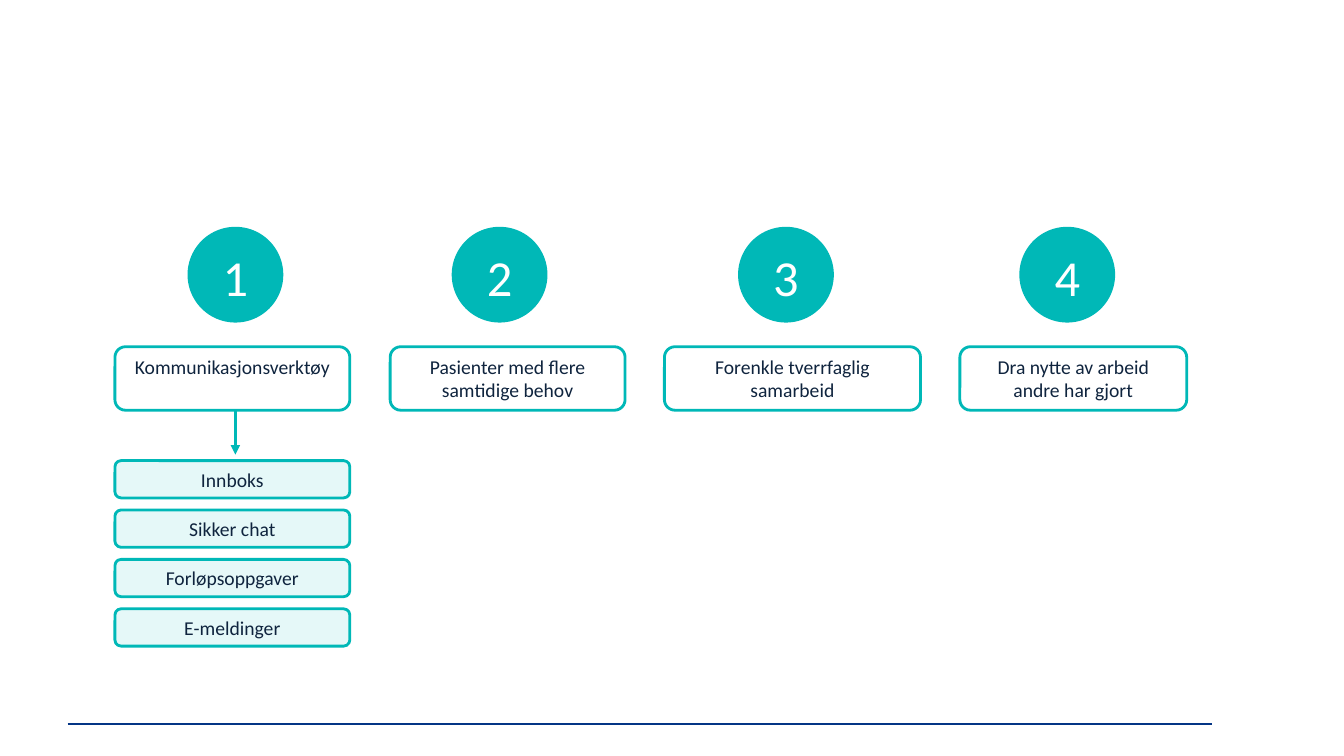
from lxml import etree
from pptx import Presentation
from pptx.dml.color import RGBColor
from pptx.enum.shapes import MSO_CONNECTOR, MSO_SHAPE
from pptx.enum.text import MSO_ANCHOR, PP_ALIGN
from pptx.oxml.ns import qn
from pptx.util import Inches, Pt

TEAL = RGBColor(0x00, 0xB8, 0xB7)
TINT = RGBColor(0xE5, 0xF8, 0xF8)
NAVY = RGBColor(0x0F, 0x24, 0x3E)
RULE_BLUE = RGBColor(0x04, 0x35, 0x85)
WHITE = RGBColor(0xFF, 0xFF, 0xFF)

STRAIGHT = MSO_CONNECTOR.STRAIGHT
OVAL, ROUNDED = MSO_SHAPE.OVAL, MSO_SHAPE.ROUNDED_RECTANGLE
TOP, MIDDLE = MSO_ANCHOR.TOP, MSO_ANCHOR.MIDDLE
CENTER = PP_ALIGN.CENTER

FONT = "Calibri"
CIRCLE = 0.95
CIRCLE_TOP = 2.25
NUMBER_W, NUMBER_H = 0.99, 0.71
HEADING_TOP, HEADING_H = 3.44, 0.63
TOOL_TOP, TOOL_H, TOOL_PITCH = 4.57, 0.37, 0.49

# Circle left, box left, box width, heading
COLUMNS = [
    (1.86, 1.14, 2.33, "Kommunikasjonsverktøy"),
    (4.48, 3.87, 2.33, "Pasienter med flere samtidige behov"),
    (7.32, 6.59, 2.54, "Forenkle tverrfaglig samarbeid"),
    (10.11, 9.52, 2.25, "Dra nytte av arbeid andre har gjort"),
]
TOOLS = ["Innboks", "Sikker chat", "Forløpsoppgaver", "E-meldinger"]


def set_text(sp, text, size, color, anchor):
    tf = sp.text_frame
    tf.word_wrap = True
    tf.vertical_anchor = anchor
    tf.text = text
    p = tf.paragraphs[0]
    p.alignment = CENTER
    font = p.runs[0].font
    font.name, font.size = FONT, Pt(size)
    font.color.rgb = color


def add_line(slide, x1, y1, x2, y2, color, width, arrow=False):
    line = slide.shapes.add_connector(
        STRAIGHT, Inches(x1), Inches(y1), Inches(x2), Inches(y2))
    line.line.color.rgb = color
    line.line.width = Pt(width)
    if arrow:
        ln = line.line._get_or_add_ln()
        etree.SubElement(ln, qn("a:tailEnd"), type="triangle")
    etree.SubElement(line._element.spPr, qn("a:effectLst"))


def add_box(shapes, x, y, w, h, text, fill, anchor):
    sp = shapes.add_shape(ROUNDED, Inches(x), Inches(y), Inches(w), Inches(h))
    sp.shadow.inherit = False
    sp.fill.solid()
    sp.fill.fore_color.rgb = fill
    sp.line.color.rgb = TEAL
    sp.line.width = Pt(2)
    set_text(sp, text, 14, NAVY, anchor)
    return sp


def add_number(slide, x, y, number):
    sp = slide.shapes.add_shape(
        OVAL, Inches(x), Inches(y), Inches(CIRCLE), Inches(CIRCLE))
    sp.shadow.inherit = False
    sp.fill.solid()
    sp.fill.fore_color.rgb = TEAL
    sp.line.fill.background()
    label = slide.shapes.add_textbox(
        Inches(x + (CIRCLE - NUMBER_W) / 2), Inches(y + 0.14),
        Inches(NUMBER_W), Inches(NUMBER_H))
    set_text(label, str(number), 36, WHITE, TOP)


def add_column(slide, number, circle_x, box_x, width, heading):
    add_number(slide, circle_x, CIRCLE_TOP, number)
    add_box(slide.shapes, box_x, HEADING_TOP, width, HEADING_H,
            heading, WHITE, TOP)


def add_tools(slide, x, y, width):
    group = slide.shapes.add_group_shape()
    for i, tool in enumerate(TOOLS):
        sp = add_box(group.shapes, x, y + i * TOOL_PITCH, width, TOOL_H,
                     tool, TINT, MIDDLE)
        sp.text_frame.margin_top = sp.text_frame.margin_bottom = 0


def main():
    prs = Presentation()
    prs.slide_width, prs.slide_height = Inches(13.33), Inches(7.5)
    slide = prs.slides.add_slide(prs.slide_layouts[6])

    # Footer rule
    add_line(slide, 0.67, 7.18, 12.02, 7.18, RULE_BLUE, 1.25)

    # Arrow that leaves from behind the first heading
    circle_x, tools_x, tools_w, _ = COLUMNS[0]
    arrow_x = circle_x + CIRCLE / 2
    add_line(slide, arrow_x, 3.83, arrow_x, 4.51, TEAL, 2.25, arrow=True)

    # Numbered headings
    for number, column in enumerate(COLUMNS, start=1):
        add_column(slide, number, *column)

    # Tools under the first heading
    add_tools(slide, tools_x, TOOL_TOP, tools_w)

    prs.save("out.pptx")


if __name__ == "__main__":
    main()
